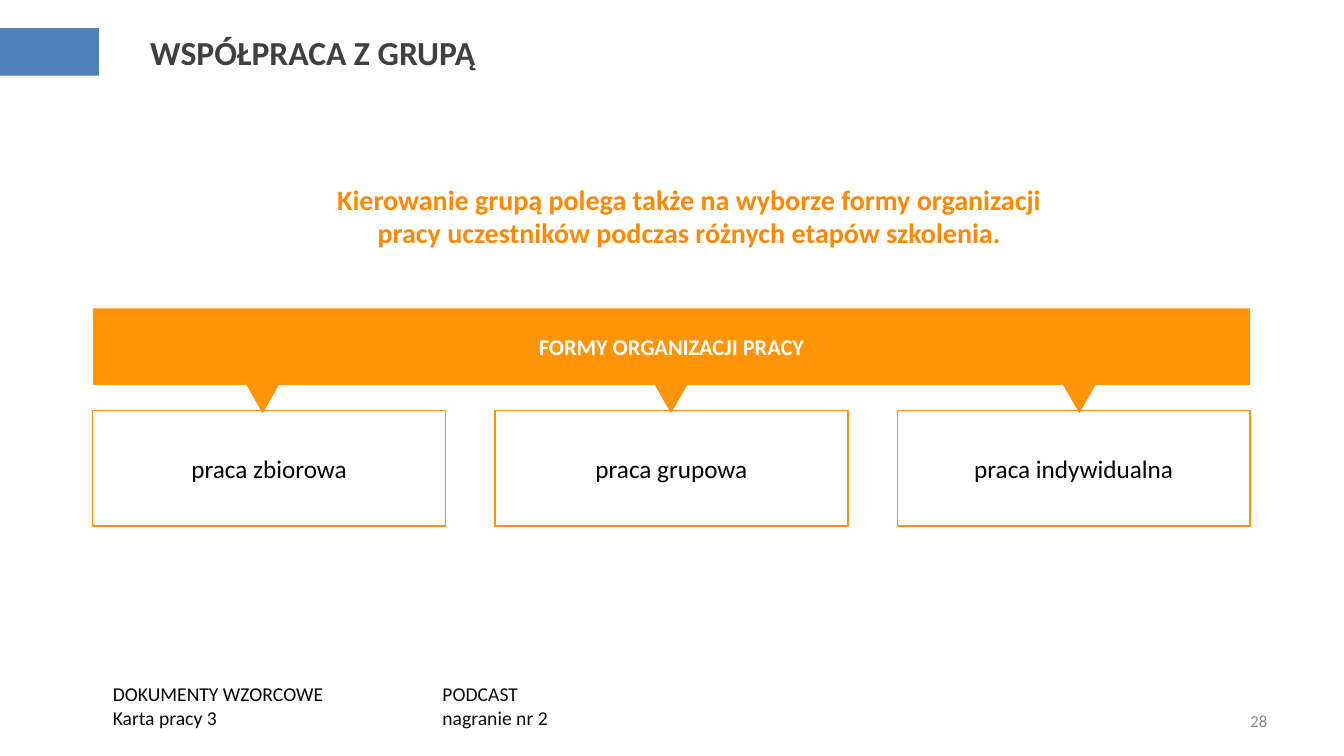
from dataclasses import dataclass
from pptx import Presentation
from pptx.dml.color import RGBColor
from pptx.enum.shapes import MSO_SHAPE
from pptx.enum.text import MSO_ANCHOR, MSO_AUTO_SIZE, PP_ALIGN
from pptx.shapes.autoshape import Shape
from pptx.slide import Slide
from pptx.util import Inches, Pt

HUES = {
    "blue": "4F81BD",
    "orange": "FF9405",
    "amber": "FF8803",
    "white": "FFFFFF",
    "black": "000000",
    "ink": "0D0D0D",
    "dark": "404040",
    "gray": "898989",
}
FONT = "Calibri"


@dataclass
class Box:
    left: float
    top: float
    width: float
    height: float


@dataclass
class Style:
    size: int
    hue: str
    bold: bool = False
    align: PP_ALIGN = PP_ALIGN.LEFT
    anchor: MSO_ANCHOR = MSO_ANCHOR.TOP


@dataclass
class Label:
    text: str
    box: Box
    style: Style
    wrap: bool = True


def color(name: str) -> RGBColor:
    return RGBColor.from_string(HUES[name])


def write(shape: Shape, text: str, style: Style, wrap: bool = True) -> None:
    frame = shape.text_frame
    frame.text = text
    frame.word_wrap = wrap
    frame.auto_size = MSO_AUTO_SIZE.NONE
    frame.vertical_anchor = style.anchor
    for line in frame.paragraphs:
        line.alignment = style.align
        for run in line.runs:
            run.font.name = FONT
            run.font.size = Pt(style.size)
            run.font.bold = style.bold
            run.font.color.rgb = color(style.hue)


def place(shape: Shape, box: Box) -> None:
    shape.left, shape.top = Inches(box.left), Inches(box.top)
    shape.width, shape.height = Inches(box.width), Inches(box.height)


def draw(slide: Slide, kind: MSO_SHAPE, box: Box, fill: str = "", line: str = "") -> Shape:
    shape = slide.shapes.add_shape(kind, 0, 0, 0, 0)
    place(shape, box)
    shape.shadow.inherit = False
    if fill:
        shape.fill.solid()
        shape.fill.fore_color.rgb = color(fill)
    else:
        shape.fill.background()
    if line:
        shape.line.color.rgb = color(line)
        shape.line.width = Pt(1)
    else:
        shape.line.fill.background()
    return shape


def note(slide: Slide, label: Label) -> Shape:
    shape = slide.shapes.add_textbox(0, 0, 0, 0)
    place(shape, label.box)
    write(shape, label.text, label.style, label.wrap)
    return shape


MID = {"align": PP_ALIGN.CENTER, "anchor": MSO_ANCHOR.MIDDLE}
HEAD = Style(24, "dark", True, anchor=MSO_ANCHOR.MIDDLE)
BAR = Style(16, "white", True, **MID)
CARD = Style(18, "black", **MID)
LEAD = Style(20, "amber", True, PP_ALIGN.CENTER)
PAGE = Style(12, "gray", align=PP_ALIGN.RIGHT, anchor=MSO_ANCHOR.MIDDLE)

FORMS = ["praca zbiorowa", "praca grupowa", "praca indywidualna"]
INTRO = Label(
    "Kierowanie grupą polega także na wyborze formy organizacji "
    "pracy uczestników podczas różnych etapów szkolenia.",
    Box(2.41, 1.76, 8.35, 0.77),
    LEAD,
)
NOTES = [
    Label("DOKUMENTY WZORCOWE\nKarta pracy 3", Box(1.02, 6.72, 3.22, 0.57), Style(14, "black")),
    Label("PODCAST\nnagranie nr 2", Box(4.29, 6.72, 1.3, 0.57), Style(14, "ink"), False),
    Label("28", Box(9.56, 6.95, 3.11, 0.4), PAGE),
]


def main() -> None:
    deck = Presentation()
    deck.slide_width, deck.slide_height = Inches(13.33), Inches(7.5)
    slide = deck.slides.add_slide(deck.slide_layouts[5])

    title = slide.shapes.title
    place(title, Box(1.39, 0.21, 5.99, 0.62))
    write(title, "WSPÓŁPRACA Z GRUPĄ", HEAD)

    draw(slide, MSO_SHAPE.RECTANGLE, Box(0, 0.28, 0.98, 0.47), "blue")
    bar = draw(slide, MSO_SHAPE.RECTANGLE, Box(0.92, 3.06, 11.48, 0.76), "orange")
    write(bar, "FORMY ORGANIZACJI PRACY", BAR)

    for i, form in enumerate(FORMS):
        card = draw(slide, MSO_SHAPE.RECTANGLE, Box(0.92 + 3.99 * i, 4.07, 3.5, 1.15), line="orange")
        write(card, form, CARD)
        tip = draw(slide, MSO_SHAPE.ISOSCELES_TRIANGLE, Box(2.41 + 4.05 * i, 3.76, 0.39, 0.34), "orange")
        tip.rotation = 180

    lead = note(slide, INTRO).text_frame.paragraphs[0]
    lead.level = 1
    lead.space_after = Pt(12)
    props = lead._p.get_or_add_pPr()
    props.set("marL", str(Inches(0.5)))
    props.set("indent", "0")

    for label in NOTES:
        note(slide, label)

    deck.save("out.pptx")


if __name__ == "__main__":
    main()
